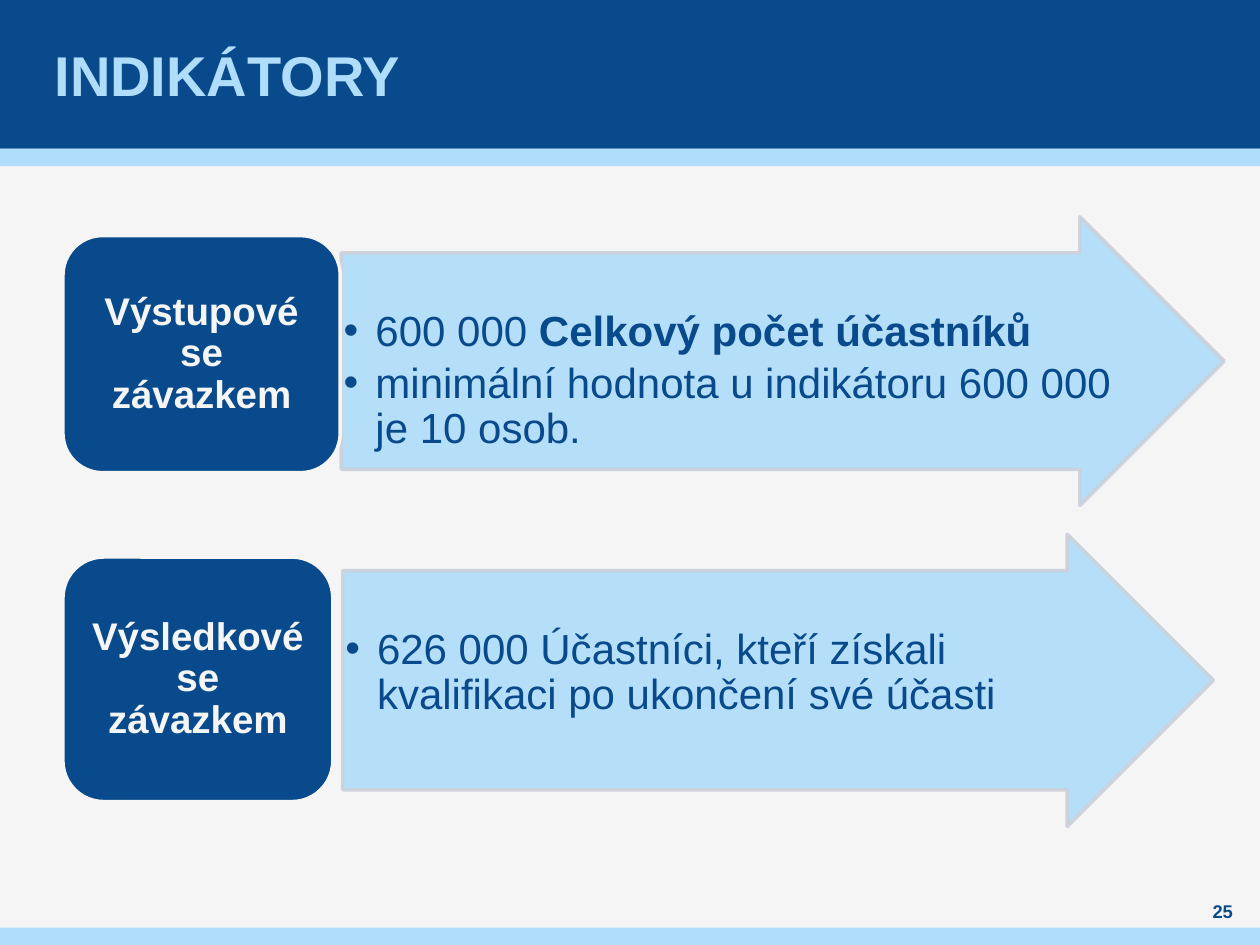
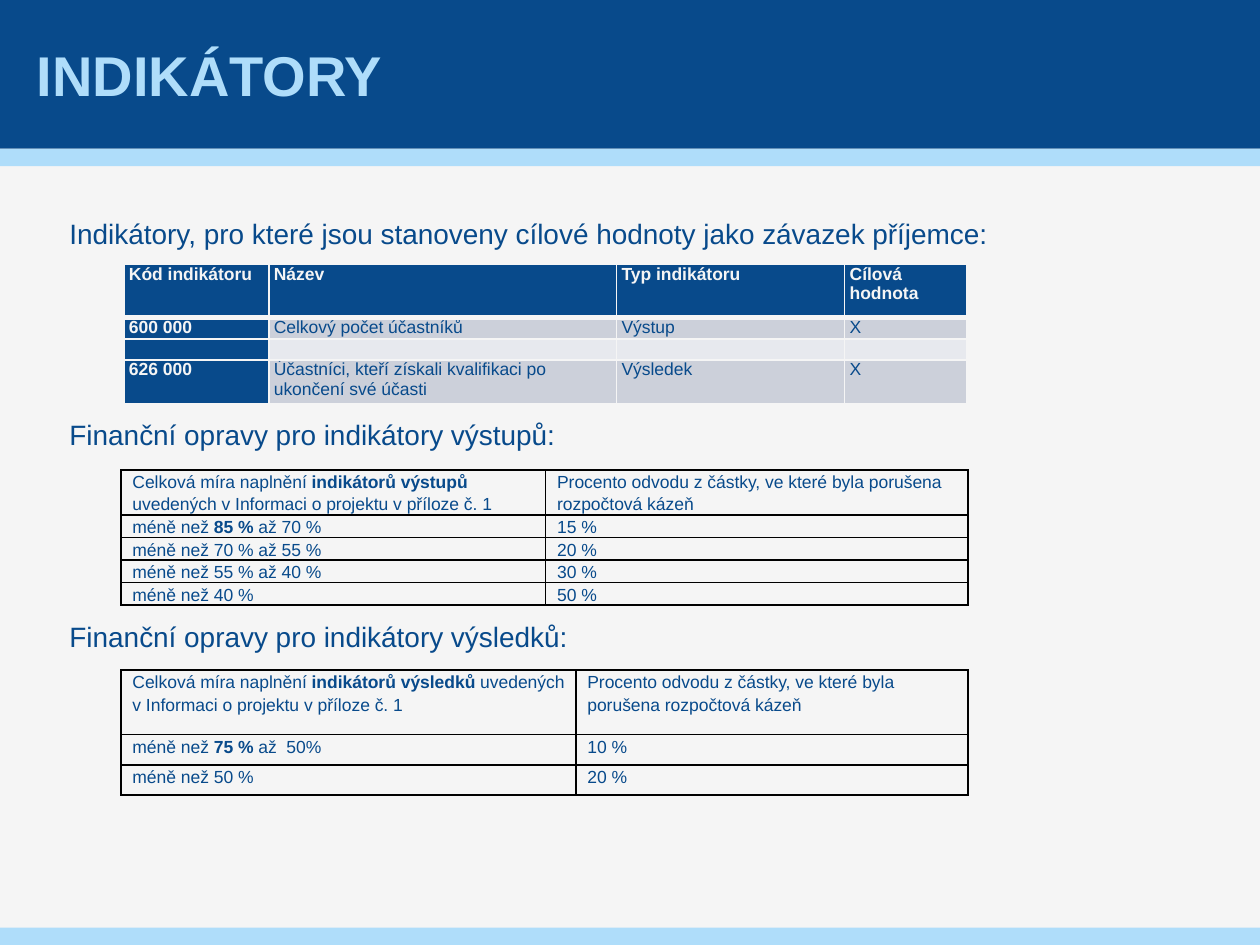
from dataclasses import dataclass

from lxml.etree import SubElement
from pptx import Presentation
from pptx.dml.color import RGBColor
from pptx.enum.shapes import MSO_SHAPE
from pptx.enum.text import MSO_ANCHOR, MSO_AUTO_SIZE, PP_ALIGN
from pptx.oxml.ns import qn
from pptx.util import Cm, Pt


@dataclass(frozen=True)
class Theme:
    font: str = "Arial"
    navy: str = "084A8B"
    sky: str = "AFDDFA"
    paper: str = "F5F5F5"
    grey: str = "CCD0DA"
    pale: str = "E7E9EE"
    black: str = "000000"
    title: float = 32
    arrow: float = 24
    label: float = 22
    heading: float = 16
    number: float = 10.5
    cell: float = 10


T = Theme()
WIDTH, HEIGHT = 25.4, 19.05
TITLE_H, STRIPE_H = 3, 0.35


def rgb(value):
    return RGBColor.from_string(value)


def cm(*values):
    return [Cm(v) for v in values]


def write(p, text, size, color, bold=False):
    for i, part in enumerate(text.split("**")):
        if part:
            r = p.add_run()
            r.text = part
            r.font.name = T.font
            r.font.size = Pt(size)
            r.font.color.rgb = rgb(color)
            r.font.bold = bold or i % 2 == 1


def set_frame(tf, anchor, left=0, top=0, right=0, bottom=0):
    tf.word_wrap = True
    tf.auto_size = MSO_AUTO_SIZE.NONE
    tf.vertical_anchor = anchor
    tf.margin_left, tf.margin_top, tf.margin_right, tf.margin_bottom = cm(left, top, right, bottom)


def set_bullet(p, char=None, indent=0.0):
    pPr = p._p.get_or_add_pPr()
    pPr.set("marL", str(Cm(indent)))
    pPr.set("indent", str(-Cm(indent)))
    if char:
        SubElement(pPr, qn("a:buFont")).set("typeface", T.font)
        SubElement(pPr, qn("a:buChar")).set("char", char)
    else:
        SubElement(pPr, qn("a:buNone"))


def add_block(slide, kind, box, fill, line=None):
    sp = slide.shapes.add_shape(kind, *cm(*box))
    sp.shadow.inherit = False
    sp.fill.solid()
    sp.fill.fore_color.rgb = rgb(fill)
    if line:
        sp.line.color.rgb = rgb(line)
        sp.line.width = Pt(2)
    else:
        sp.line.fill.background()
    return sp


def set_master(prs, slide):
    master = prs.slide_master
    master.background.fill.solid()
    master.background.fill.fore_color.rgb = rgb(T.paper)
    bands = [(0, TITLE_H, T.navy), (TITLE_H, STRIPE_H, T.sky), (HEIGHT - STRIPE_H, STRIPE_H, T.sky)]
    for i, (top, height, color) in enumerate(bands):
        sp = add_block(slide, MSO_SHAPE.RECTANGLE, (0, top, WIDTH, height), color)
        sp._element.nvSpPr.cNvPr.set("id", str(100 + i))
        master.shapes._spTree.insert(2 + i, sp._element)


def add_title(slide, text, left):
    sp = slide.shapes.title
    sp.left, sp.top, sp.width, sp.height = cm(left, 0, 23.4, TITLE_H)
    set_frame(sp.text_frame, MSO_ANCHOR.MIDDLE, left=0.1, right=0.1)
    p = sp.text_frame.paragraphs[0]
    p.alignment = PP_ALIGN.LEFT
    write(p, text, T.title, T.sky, bold=True)


def add_arrow(slide, box, items):
    left, top, width, height = box
    sp = add_block(slide, MSO_SHAPE.RIGHT_ARROW, box, T.sky, T.grey)
    shaft, head = 0.75, 0.5
    sp.adjustments[0], sp.adjustments[1] = shaft, head
    for clr in sp._element.iter(qn("a:srgbClr")):
        SubElement(clr, qn("a:alpha")).set("val", "90000")
    drop = 1.1
    text_box = slide.shapes.add_textbox(*cm(
        left, top + height * (1 - shaft) / 2 + drop,
        width - height * head * (1 - (1 - shaft)), height * shaft - drop))
    tf = text_box.text_frame
    set_frame(tf, MSO_ANCHOR.TOP, 0.05, 0.05, 0.05, 0.05)
    for i, item in enumerate(items):
        p = tf.add_paragraph() if i else tf.paragraphs[0]
        p.line_spacing = 0.9
        p.space_after = Pt(4)
        set_bullet(p, "•", 0.64)
        write(p, item, T.arrow, T.navy)


def add_label(slide, box, text):
    sp = add_block(slide, MSO_SHAPE.ROUNDED_RECTANGLE, box, T.navy, T.paper)
    set_frame(sp.text_frame, MSO_ANCHOR.MIDDLE, 0.24, 0.13, 0.24, 0.13)
    p = sp.text_frame.paragraphs[0]
    p.alignment = PP_ALIGN.CENTER
    p.line_spacing = 0.9
    write(p, text, T.label, T.paper, bold=True)


def add_number(slide, text):
    sp = slide.shapes.add_textbox(*cm(24, 18.11, 1.3, 0.5))
    set_frame(sp.text_frame, MSO_ANCHOR.MIDDLE)
    p = sp.text_frame.paragraphs[0]
    p.alignment = PP_ALIGN.CENTER
    write(p, text, T.number, T.navy, bold=True)


def add_headings(slide, box, headings):
    sp = slide.placeholders[1]
    sp.left, sp.top, sp.width, sp.height = cm(*box)
    tf = sp.text_frame
    set_frame(tf, MSO_ANCHOR.TOP)
    line = 28.8
    for i, heading in enumerate(headings):
        p = tf.add_paragraph() if i else tf.paragraphs[0]
        p.line_spacing = Pt(line)
        p.space_before = Pt(3 * line if i else 0)
        p.space_after = Pt(0)
        set_bullet(p)
        write(p, heading, T.heading, T.navy)


def set_borders(cell, color, bottom=1):
    tcPr = cell._tc.get_or_add_tcPr()
    for i, (side, width) in enumerate((("L", 1), ("R", 1), ("T", 1), ("B", bottom))):
        ln = tcPr.makeelement(qn(f"a:ln{side}"), {"w": str(Pt(width))})
        SubElement(SubElement(ln, qn("a:solidFill")), qn("a:srgbClr")).set("val", color)
        tcPr.insert(i, ln)


def add_grid(slide, left, top, widths, heights, rows, format_cell):
    frame = slide.shapes.add_table(
        len(rows), len(widths), *cm(left, top, sum(widths), sum(heights)))
    table = frame.table
    table.first_row = table.horz_banding = False
    for column, width in zip(table.columns, widths):
        column.width = Cm(width)
    for y, (row, height) in enumerate(zip(rows, heights)):
        table.rows[y].height = Cm(height)
        for x, text in enumerate(row):
            format_cell(table.cell(y, x), y, x, text)


def format_indicator(cell, y, x, text):
    strong = y == 0 or x == 0
    cell.margin_left = Cm(0.1)
    cell.margin_top = cell.margin_right = cell.margin_bottom = 0
    cell.fill.solid()
    cell.fill.fore_color.rgb = rgb(T.navy if strong else T.grey if y % 2 else T.pale)
    set_borders(cell, T.paper, bottom=1 if y else 3)
    p = cell.text_frame.paragraphs[0]
    write(p, text, T.cell, T.paper if strong else T.navy, bold=strong)
    if not text:
        p._p.get_or_add_endParaRPr().set("sz", str(int(T.cell * 100)))


def format_correction(cell, y, x, text):
    cell.margin_left, cell.margin_right = cm(0.23, 0.13)
    cell.margin_top = cell.margin_bottom = 0
    cell.fill.background()
    set_borders(cell, T.black)
    p = cell.text_frame.paragraphs[0]
    p.line_spacing = 1.15
    write(p, text, T.cell, T.navy)


def build_commitments(slide):
    add_title(slide, "INDIKÁTORY", 1)
    add_arrow(slide, (6.88, 4.37, 17.8, 5.82), [
        "600 000 **Celkový počet účastníků**",
        "minimální hodnota u indikátoru 600 000 je 10 osob."])
    add_label(slide, (1.27, 4.75, 5.59, 4.78), "Výstupové se závazkem")
    add_arrow(slide, (6.91, 10.77, 17.55, 5.89), [
        "626 000 Účastníci, kteří získali kvalifikaci po ukončení své účasti"])
    add_label(slide, (1.27, 11.23, 5.44, 4.93), "Výsledkové se závazkem")
    add_number(slide, "25")


def build_tables(slide):
    add_title(slide, "INDIKÁTORY", 0.64)
    add_headings(slide, (1.4, 4.02, 22.6, 14.1), [
        "Indikátory, pro které jsou stanoveny cílové hodnoty jako závazek příjemce:",
        "Finanční opravy pro indikátory výstupů:",
        "Finanční opravy pro indikátory výsledků:"])
    add_grid(slide, 2.5, 5.33, [2.92, 7.01, 4.6, 2.46], [1.07, 0.43, 0.43, 0.87], [
        ("Kód indikátoru", "Název", "Typ indikátoru", "Cílová hodnota"),
        ("600 000", "Celkový počet účastníků", "Výstup", "X"),
        ("", "", "", ""),
        ("626 000", "Účastníci, kteří získali kvalifikaci po ukončení své účasti", "Výsledek", "X"),
    ], format_indicator)
    measure = "Celková míra naplnění **indikátorů {}** uvedených v Informaci o projektu v příloze č. 1"
    levy = "Procento odvodu z částky, ve které byla porušena rozpočtová kázeň"
    add_grid(slide, 2.44, 9.47, [8.56, 8.51], [0.91] + [0.45] * 4, [
        (measure.format("výstupů"), levy),
        ("méně než **85 %** až 70 %", "15 %"),
        ("méně než 70 % až 55 %", "20 %"),
        ("méně než 55 % až 40 %", "30 %"),
        ("méně než 40 %", "50 %"),
    ], format_correction)
    add_grid(slide, 2.44, 13.51, [9.17, 7.9], [1.3] + [0.61] * 2, [
        (measure.format("výsledků"), levy),
        ("méně než **75 %** až  50%", "10 %"),
        ("méně než 50 %", "20 %"),
    ], format_correction)


def main():
    prs = Presentation()
    prs.slide_width, prs.slide_height = cm(WIDTH, HEIGHT)
    title_only, title_body = prs.slide_layouts[5], prs.slide_layouts[1]
    commitments = prs.slides.add_slide(title_only)
    set_master(prs, commitments)
    build_commitments(commitments)
    build_tables(prs.slides.add_slide(title_body))
    prs.save("out.pptx")


if __name__ == "__main__":
    main()
